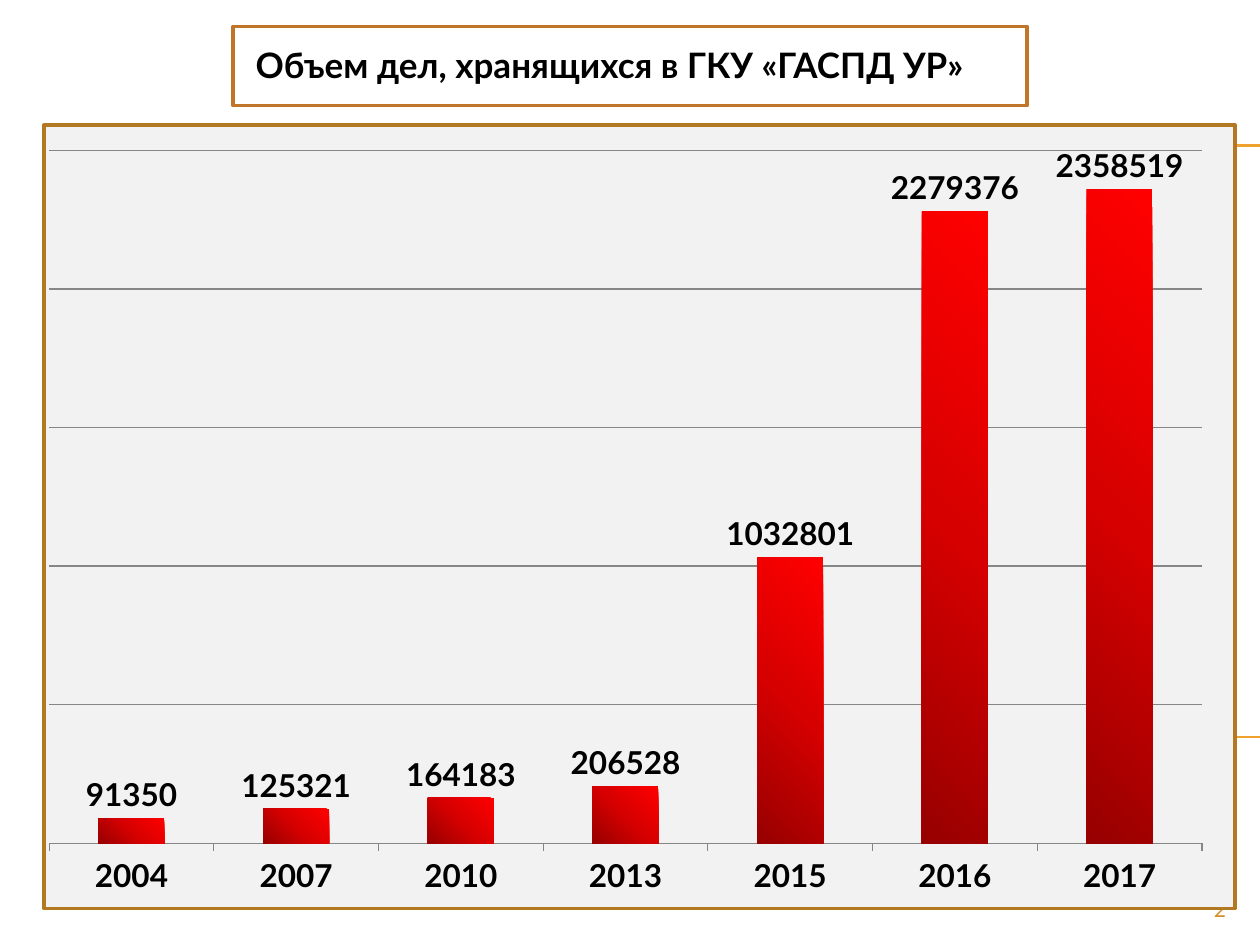
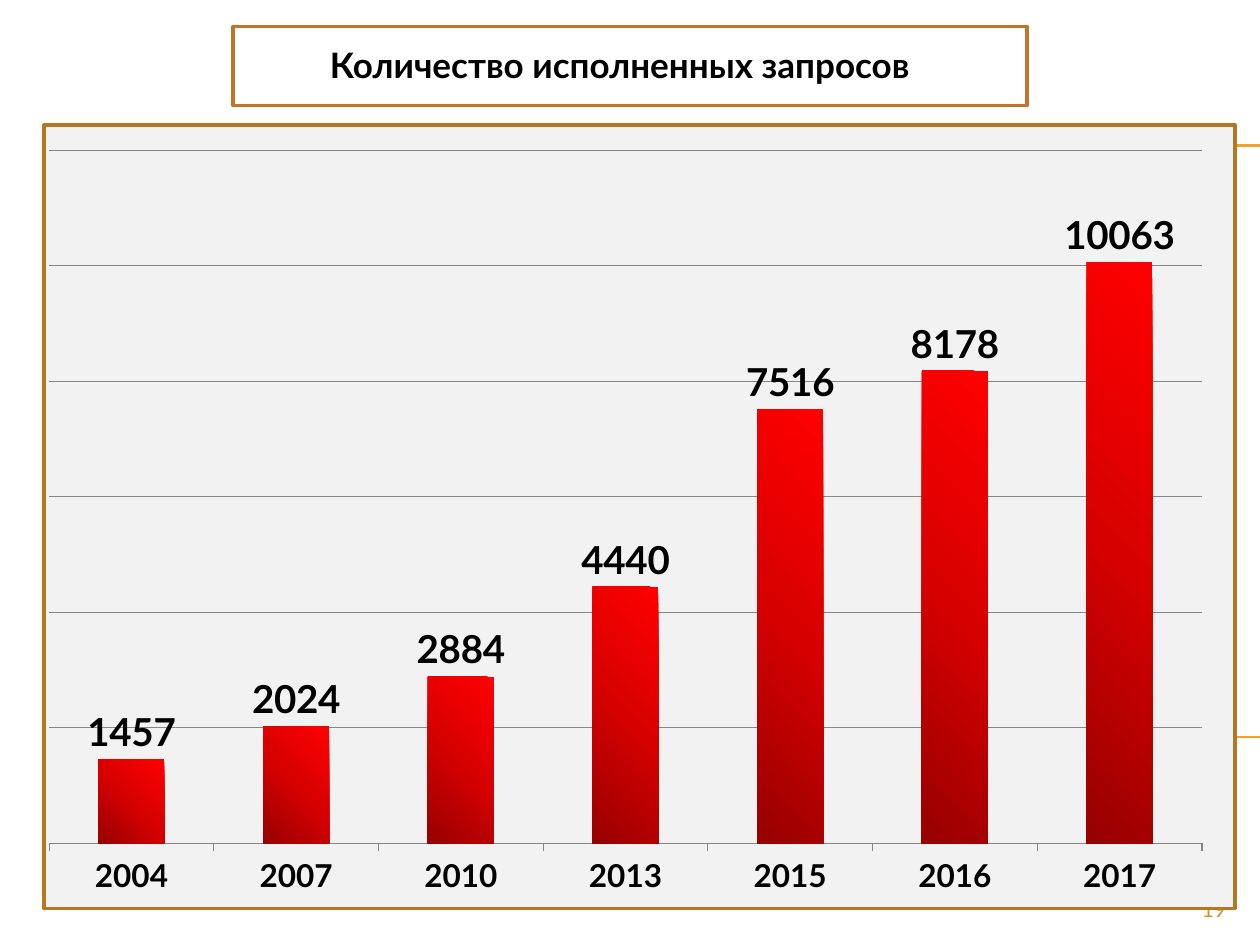
from pptx import Presentation
from pptx.chart.data import CategoryChartData
from pptx.dml.color import RGBColor
from pptx.enum.chart import XL_CHART_TYPE, XL_LABEL_POSITION, XL_TICK_LABEL_POSITION, XL_TICK_MARK
from pptx.enum.shapes import MSO_CONNECTOR, MSO_SHAPE
from pptx.enum.text import MSO_ANCHOR, PP_ALIGN
from pptx.oxml import parse_xml
from pptx.oxml.ns import nsdecls
from pptx.util import Inches, Pt

COLUMN = XL_CHART_TYPE.COLUMN_CLUSTERED
OUTSIDE = XL_LABEL_POSITION.OUTSIDE_END
LOW = XL_TICK_LABEL_POSITION.LOW
TICK_OUT = XL_TICK_MARK.OUTSIDE
NO_TICK = XL_TICK_MARK.NONE
STRAIGHT = MSO_CONNECTOR.STRAIGHT
RECT = MSO_SHAPE.RECTANGLE
MIDDLE = MSO_ANCHOR.MIDDLE
LEFT, CENTER, RIGHT = PP_ALIGN.LEFT, PP_ALIGN.CENTER, PP_ALIGN.RIGHT

FONT = "Lato"
BLACK = "000000"
GRID = "868686"
RULE = "F0A22E"
NUMBER = "D48F29"
PANEL = (0.35, 0.99, 9.45, 6.22, "F2F2F2", "B27822")
BANNER = (1.85, 0.21, 6.3, 0.63, "FFFFFF", "C17529")
STOPS = [(0, "970000"), (50, "D70000"), (100, "FF0000")]
PLOT = {"x": 0.02, "y": 0.02, "w": 0.96, "h": 0.896}
YEARS = ["2004", "2007", "2010", "2013", "2015", "2016", "2017"]

SLIDES = [
    dict(page="2", title="Объем дел, хранящихся в ГКУ «ГАСПД УР»",
         left=1.93, width=6.45, align=LEFT, size=18, top=2500000, step=500000,
         vals=[91350, 125321, 164183, 206528, 1032801, 2279376, 2358519]),
    dict(page="19", title="Количество исполненных запросов",
         left=2.32, width=5.2, align=CENTER, size=22, top=12000, step=2000,
         vals=[1457, 2024, 2884, 4440, 7516, 8178, 10063]),
]


def paint(color, code):
    color.rgb = RGBColor.from_string(code)


def write(slide, box, text, size, code, align, bold=False):
    frame = slide.shapes.add_textbox(*map(Inches, box)).text_frame
    frame.word_wrap = True
    frame.vertical_anchor = MIDDLE
    para = frame.paragraphs[0]
    para.alignment = align
    run = para.add_run()
    run.text = text
    run.font.name = FONT
    run.font.size = Pt(size)
    run.font.bold = bold
    paint(run.font.color, code)


deck = Presentation()
deck.slide_width = Inches(10)
deck.slide_height = Inches(7.5)

for item in SLIDES:
    slide = deck.slides.add_slide(deck.slide_layouts[6])

    for y in (1.15, 1.16, 5.85):
        rule = slide.shapes.add_connector(STRAIGHT, Inches(0.56), Inches(y), Inches(10), Inches(y))
        rule.line.width = Pt(0.75)
        paint(rule.line.color, RULE)
        rule._element.spPr.append(parse_xml(f"<a:effectLst {nsdecls('a')}/>"))

    write(slide, (9, 7.08, 0.83, 0.27), item["page"], 12, NUMBER, RIGHT)

    for *box, fill, edge in (PANEL, BANNER):
        frame = slide.shapes.add_shape(RECT, *map(Inches, box))
        frame.shadow.inherit = False
        frame.fill.solid()
        paint(frame.fill.fore_color, fill)
        frame.line.width = Pt(2)
        paint(frame.line.color, edge)

    data = CategoryChartData()
    data.categories = YEARS
    data.add_series("Series 1", item["vals"])
    box = map(Inches, (0.2, 1.07, 9.53, 6.14))
    chart = slide.shapes.add_chart(COLUMN, *box, data).chart
    chart.has_legend = False
    chart.has_title = False
    chart.font.name = FONT
    chart.font.size = Pt(18)
    paint(chart.font.color, BLACK)

    years = chart.category_axis
    years.major_tick_mark = TICK_OUT
    years.minor_tick_mark = NO_TICK
    years.tick_label_position = LOW
    years.tick_labels.font.bold = True
    scale = chart.value_axis
    scale.visible = False
    scale.minimum_scale = 0
    scale.maximum_scale = item["top"]
    scale.major_unit = item["step"]
    scale.has_major_gridlines = True
    for line in (years.format.line, scale.major_gridlines.format.line):
        line.width = Pt(0.75)
        paint(line.color, GRID)

    plot = chart.plots[0]
    plot.gap_width = 150
    plot.vary_by_categories = False
    plot.has_data_labels = True
    labels = plot.data_labels
    labels.show_value = True
    labels.position = OUTSIDE
    labels.font.name = FONT
    labels.font.size = Pt(item["size"])
    labels.font.bold = True
    paint(labels.font.color, BLACK)

    bars = plot.series[0]
    bars.invert_if_negative = False
    stops = "".join(f'<a:gs pos="{pos * 1000}"><a:srgbClr val="{code}"/></a:gs>' for pos, code in STOPS)
    bars._element.get_or_add_spPr().insert(0, parse_xml(
        f'<a:gradFill {nsdecls("a")} rotWithShape="1"><a:gsLst>{stops}</a:gsLst>'
        '<a:path path="circle"><a:fillToRect t="100000" r="100000"/></a:path></a:gradFill>'))

    area = chart._chartSpace.chart.plotArea
    for old in area.xpath("c:layout"):
        area.remove(old)
    modes = "".join(f'<c:{axis}Mode val="edge"/>' for axis in "xy")
    sides = "".join(f'<c:{key} val="{val}"/>' for key, val in PLOT.items())
    area.insert(0, parse_xml(
        f'<c:layout {nsdecls("c")}><c:manualLayout><c:layoutTarget val="inner"/>'
        f'{modes}{sides}</c:manualLayout></c:layout>'))

    write(slide, (item["left"], 0.29, item["width"], 0.44), item["title"], 20, BLACK, item["align"], True)

deck.save("out.pptx")
